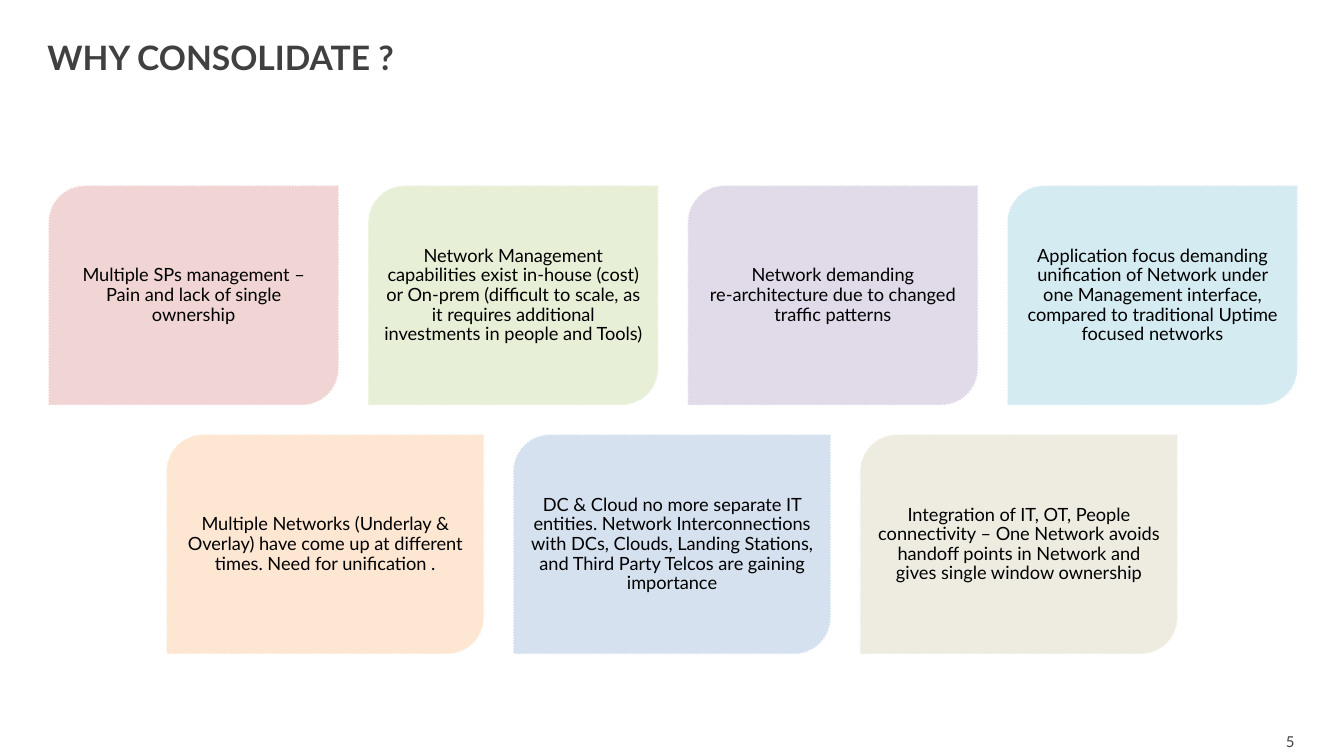
import pptx
import pptx.util
import pptx.dml.color
import pptx.enum.dml
import pptx.enum.shapes
import pptx.enum.text

Inches = pptx.util.Inches
Pt = pptx.util.Pt
ALIGN = pptx.enum.text.PP_ALIGN

COLORS = {
    "heading": "404040", "text": "000000", "border": "FFFFFF",
    "rose": "F0D5D4", "green": "E7EFD7", "violet": "E0DAE9", "aqua": "D3EBF1",
    "peach": "FDE6D2", "blue": "D5E1EF", "sand": "EEECE1",
}


def rgb(name):
    return pptx.dml.color.RGBColor.from_string(COLORS[name])


def write(frame, paragraphs, size, color, align, insets, bold=False, spacing=None):
    frame.word_wrap = True
    frame.vertical_anchor = pptx.enum.text.MSO_ANCHOR.MIDDLE
    frame.margin_left, frame.margin_top, frame.margin_right, frame.margin_bottom = map(Inches, insets)
    for index, text in enumerate(paragraphs):
        paragraph = frame.add_paragraph() if index else frame.paragraphs[0]
        paragraph.alignment = align
        paragraph.line_spacing = spacing
        run = paragraph.add_run()
        run.text = text
        run.font.name = "Lato"
        run.font.size = Pt(size)
        run.font.bold = bold
        run.font.color.rgb = rgb(color)


deck = pptx.Presentation()
deck.slide_width, deck.slide_height = Inches(13.33), Inches(7.5)
slide = deck.slides.add_slide(deck.slide_layouts[5])

# Title
title = slide.shapes.title
title.left, title.top, title.width, title.height = map(Inches, (0.47, 0.32, 11.34, 0.5))
write(title.text_frame, ["WHY CONSOLIDATE ?"], 24, "heading", ALIGN.LEFT,
      (0, 0.05, 0.1, 0.05), bold=True)

# Reasons: left and top of each row, card width, then the cards
CARD_HEIGHT, GAP = 2.18, 0.29
reason_rows = [
    (0.48, 1.84, 2.88, [
        ("rose", ["Multiple SPs management – Pain and lack of single ownership"]),
        ("green", ["Network Management capabilities exist in-house (cost) or On-prem "
                   "(difficult to scale, as it requires additional investments in people and Tools)"]),
        ("violet", ["Network demanding", "re-architecture due to changed traffic patterns"]),
        ("aqua", ["Application focus demanding unification of Network under one Management "
                  "interface, compared to traditional Uptime focused networks"]),
    ]),
    (1.65, 4.31, 3.15, [
        ("peach", ["Multiple Networks (Underlay & Overlay) have come up at different times. "
                   "Need for unification ."]),
        ("blue", ["DC & Cloud no more separate IT entities. Network Interconnections with DCs, "
                  "Clouds, Landing Stations, and Third Party Telcos are gaining importance"]),
        ("sand", ["Integration of IT, OT, People connectivity – One Network avoids handoff "
                  "points in Network and gives single window ownership"]),
    ]),
]
for left, top, width, reasons in reason_rows:
    for column, (color, paragraphs) in enumerate(reasons):
        card = slide.shapes.add_shape(
            pptx.enum.shapes.MSO_SHAPE.ROUND_2_DIAG_RECTANGLE,
            Inches(left + column * (width + GAP)), Inches(top), Inches(width), Inches(CARD_HEIGHT))
        card.shadow.inherit = False
        card.fill.solid()
        card.fill.fore_color.rgb = rgb(color)
        card.line.color.rgb = rgb("border")
        card.line.width = Pt(1)
        card.line.dash_style = pptx.enum.dml.MSO_LINE.ROUND_DOT
        write(card.text_frame, paragraphs, 13, "text", ALIGN.CENTER,
              (0.05, 0.05, 0.05, 0.05), spacing=Pt(14))

# Page number
page_number = slide.shapes.add_textbox(Inches(12.23), Inches(7.25), Inches(0.61), Inches(0.21))
write(page_number.text_frame, ["5"], 10.7, "heading", ALIGN.RIGHT, (0.13, 0.07, 0, 0.07))

deck.save("out.pptx")
